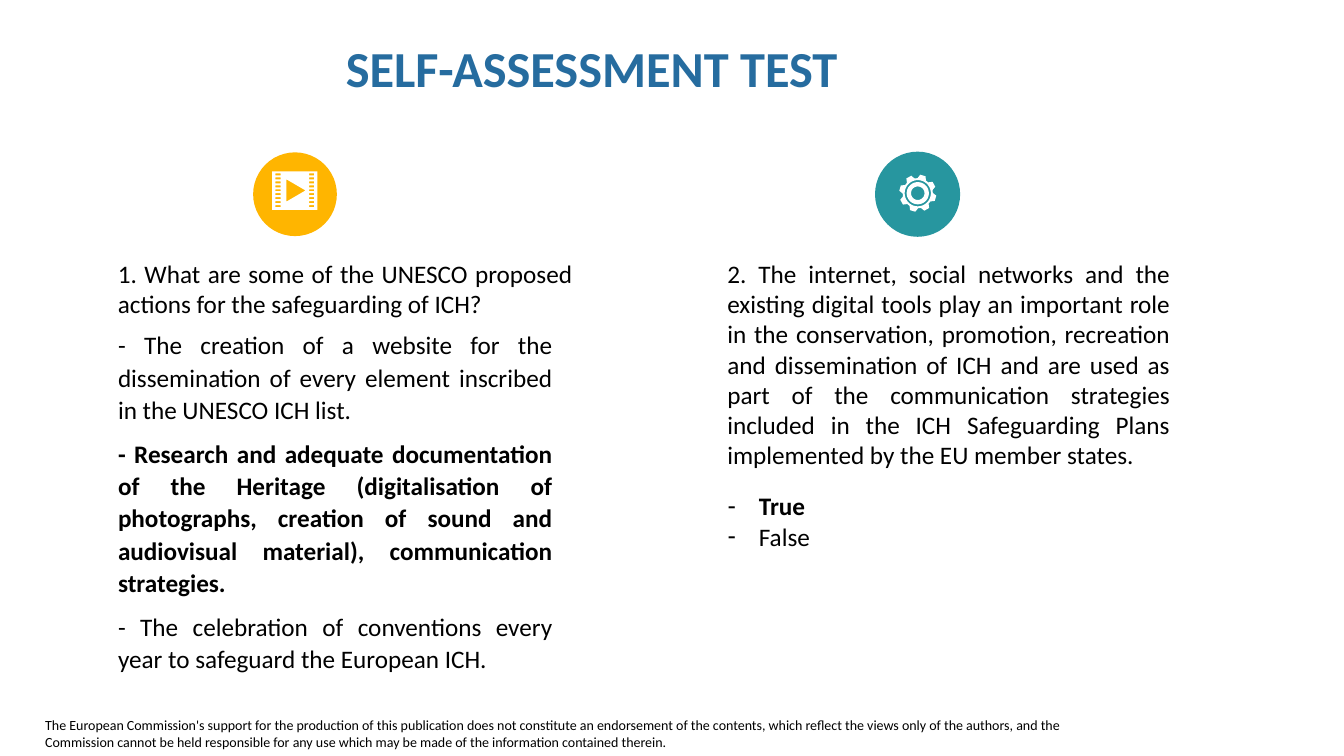
import math
import pptx
import pptx.util
import pptx.dml.color
import pptx.enum.shapes
import pptx.enum.text
import pptx.oxml

Cm, Pt = pptx.util.Cm, pptx.util.Pt
RGBColor = pptx.dml.color.RGBColor
ALIGN = pptx.enum.text.PP_ALIGN
ANCHOR = pptx.enum.text.MSO_ANCHOR
BLACK = RGBColor(0x00, 0x00, 0x00)
WHITE = RGBColor(0xFF, 0xFF, 0xFF)
BLUE = RGBColor(0x26, 0x6C, 0x9F)
GOLD = RGBColor(0xFF, 0xB5, 0x00)
TEAL = RGBColor(0x27, 0x96, 0x9F)
NS = "http://schemas.openxmlformats.org/drawingml/2006/main"

deck = pptx.Presentation()
deck.slide_width, deck.slide_height = Cm(33.87), Cm(19.05)
slide = deck.slides.add_slide(deck.slide_layouts[3])  # Two Content
shapes = slide.shapes
title, left, right = slide.placeholders


def write(box, place, lines, size=18, color=BLACK, align=ALIGN.JUSTIFY):
    """Place a box and fill it with (text, bold) lines."""
    box.left, box.top, box.width, box.height = map(Cm, place)
    frame = box.text_frame
    frame.word_wrap = True
    frame.auto_size = pptx.enum.text.MSO_AUTO_SIZE.NONE
    frame.text = "\n".join(text for text, bold in lines)
    for para, (text, bold) in zip(frame.paragraphs, lines):
        para.alignment = align
        para.space_before = Pt(0)
        font = para.font
        font.name, font.size, font.bold = "Calibri", Pt(size), bold
        font.color.rgb = color
    return frame


def icon(rings):
    """Draw closed rings as one white outline; inner rings are holes."""
    pen = None
    for ring in rings:
        dots = [(Cm(x), Cm(y)) for x, y in ring]
        if pen is None:
            pen = shapes.build_freeform(*dots[0])
        else:
            pen.move_to(*dots[0])
        pen.add_line_segments(dots[1:], close=True)
    shape = pen.convert_to_shape()
    shape.shadow.inherit = False
    shape.fill.solid()
    shape.fill.fore_color.rgb = WHITE
    shape.line.fill.background()


# Title
frame = write(title, (8.46, 0.79, 24.05, 2.01),
              [("SELF-ASSESSMENT TEST", True)], 36, BLUE, ALIGN.LEFT)
frame.vertical_anchor = ANCHOR.MIDDLE
frame.paragraphs[0].line_spacing = 0.9

# Questions and footer
for place, text, size, align in [
    ((2.72, 6.38, 11.96, 1.3),
     "1. What are some of the UNESCO proposed actions for the safeguarding "
     "of ICH?", 18, ALIGN.JUSTIFY),
    ((18.08, 6.38, 11.66, 0.51),
     "2. The internet, social networks and the existing digital tools play an "
     "important role in the conservation, promotion, recreation and "
     "dissemination of ICH and are used as part of the communication "
     "strategies included in the ICH Safeguarding Plans implemented by the "
     "EU member states.", 18, ALIGN.JUSTIFY),
    ((0.89, 17.93, 26.57, 1.12),
     "The European Commission's support for the production of this "
     "publication does not constitute an endorsement of the contents, which "
     "reflect the views only of the authors, and the Commission cannot be "
     "held responsible for any use which may be made of the information "
     "contained therein.", 10, ALIGN.LEFT),
]:
    box = shapes.add_textbox(0, 0, 0, 0)
    write(box, place, [(text, False)], size, BLACK, align)

# Answers to question 1
frame = write(left, (2.72, 8.13, 11.46, 2.31), [
    ("- The creation of a website for the dissemination of every element "
     "inscribed in the UNESCO ICH list.", False),
    ("- Research and adequate documentation of the Heritage (digitalisation "
     "of photographs, creation of sound and audiovisual material), "
     "communication strategies.", True),
    ("- The celebration of conventions every year to safeguard the European "
     "ICH.", False),
])
for para in frame.paragraphs:
    para.line_spacing, para.space_after = 1.07, Pt(8)
    props = para._p.get_or_add_pPr()
    props.set("marL", "0")
    props.set("indent", "0")
    none = pptx.oxml.parse_xml(f'<a:buNone xmlns:a="{NS}"/>')
    props.insert_element_before(none, "a:tabLst", "a:defRPr", "a:extLst")

# Answers to question 2
frame = write(right, (18.08, 12.24, 6.1, 2.31),
              [("True", True), ("False", False)])
for para in frame.paragraphs:
    props = para._p.get_or_add_pPr()
    props.set("marL", str(Cm(0.79)))
    props.set("indent", str(-Cm(0.79)))
    dash = pptx.oxml.parse_xml(f'<a:buChar xmlns:a="{NS}" char="-"/>')
    props.insert_element_before(dash, "a:tabLst", "a:defRPr", "a:extLst")

# Icon discs
for x, color in [(6.38, GOLD), (22.07, TEAL)]:
    disc = shapes.add_shape(pptx.enum.shapes.MSO_SHAPE.OVAL,
                            Cm(x), Cm(3.84), Cm(2.11), Cm(2.11))
    disc.shadow.inherit = False
    disc.fill.solid()
    disc.fill.fore_color.rgb = color
    if color == TEAL:
        disc.line.color.rgb = color
        disc.line.width = Pt(1)
    else:
        disc.line.fill.background()

# Film strip: frame, sprocket holes, play mark
x, y = 6.86, 4.32
rects = [(x, y, 1.14, 0.97)]
for row in range(9):
    for col in (0.08, 0.93):
        rects.append((x + col, y + 0.05 + row * 0.1, 0.13, 0.05))
film = [[(l, t), (l + w, t), (l + w, t + h), (l, t + h)]
        for l, t, w, h in rects]
film.append([(x + 0.36, y + 0.2), (x + 0.36, y + 0.76), (x + 0.84, y + 0.48)])
icon(film)

# Gear: eight teeth, then three round rings
polar = [[(45 * tooth + 16 + turn, r) for tooth in range(8)
          for turn, r in [(-17, 0.38), (-8.5, 0.47), (8.5, 0.47), (17, 0.38)]]]
for r in (0.33, 0.28, 0.17):
    polar.append([(turn, r) for turn in range(0, 360, 10)])
icon([[(23.13 + r * math.cos(math.radians(turn)),
        4.87 + r * math.sin(math.radians(turn))) for turn, r in ring]
      for ring in polar])

deck.save("out.pptx")
